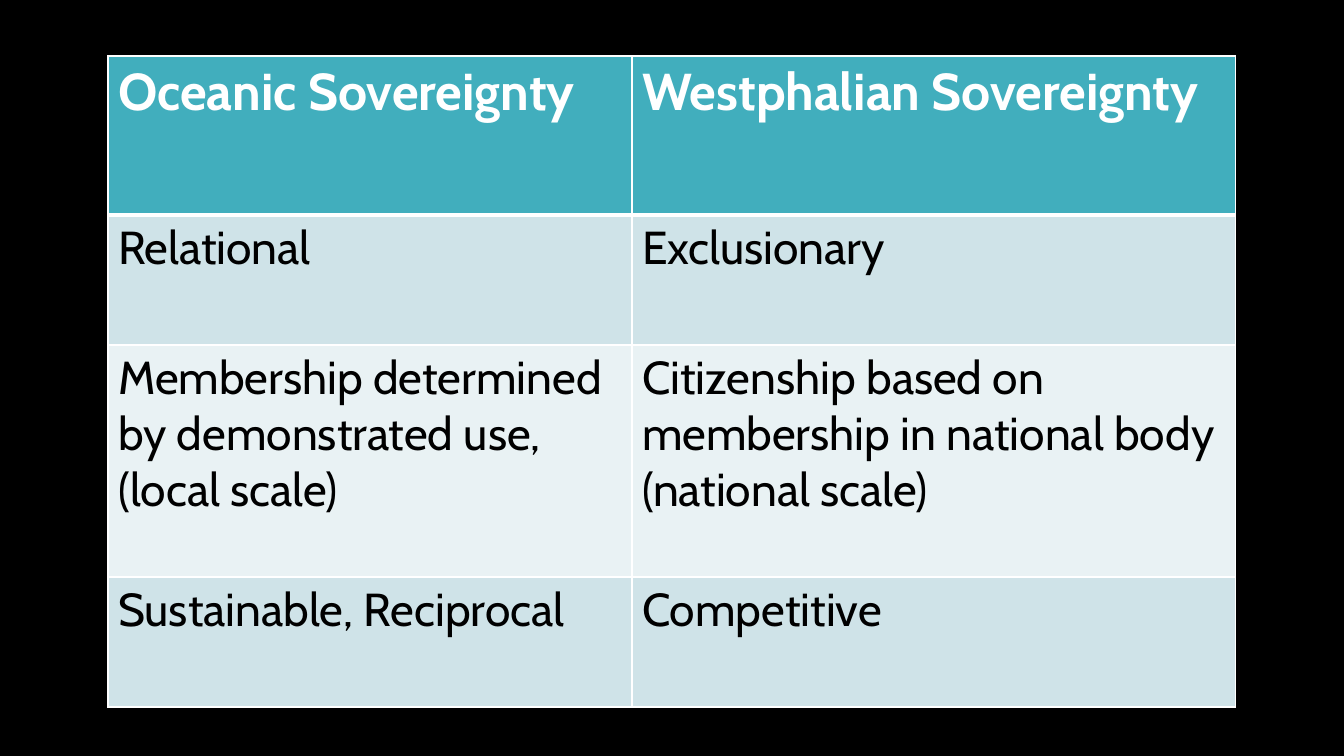
from lxml import etree
from pptx import Presentation, util as u
from pptx.dml.color import RGBColor
from pptx.oxml.ns import qn

ROWS = [
    ("Oceanic Sovereignty", "Westphalian Sovereignty"),
    ("Relational", "Exclusionary"),
    ("Membership determined by demonstrated use, (local scale)",
     "Citizenship based on membership in national body (national scale)"),
    ("Sustainable, Reciprocal", "Competitive"),
]
WIDTHS = [524, 604]
HEIGHTS = [159, 130, 232, 130]
LEFT, TOP = 108, 56

BLACK = RGBColor(0x00, 0x00, 0x00)
WHITE = RGBColor(0xFF, 0xFF, 0xFF)
TEAL = RGBColor(0x41, 0xAE, 0xBD)
MIST = RGBColor(0xCF, 0xE3, 0xE8)
PALE = RGBColor(0xE9, 0xF2, 0xF4)


def px(n):
    return u.Emu(round(n * 914400 / 100.8))


def write(cell, words, size, color, bold=False):
    cell.text = words
    font = cell.text_frame.paragraphs[0].runs[0].font
    font.name, font.size, font.bold = "Cabin", u.Pt(size), bold
    font.color.rgb = color


def edge(cell, side, width):
    line = etree.SubElement(cell._tc.get_or_add_tcPr(), qn("a:ln" + side),
                            w=str(u.Pt(width)))
    fill = etree.SubElement(line, qn("a:solidFill"))
    etree.SubElement(fill, qn("a:srgbClr"), val=str(WHITE))


def main():
    deck = Presentation()
    deck.slide_width, deck.slide_height = px(1344), px(756)
    slide = deck.slides.add_slide(deck.slide_layouts[6])
    back = slide.background.fill
    back.solid()
    back.fore_color.rgb = BLACK

    table = slide.shapes.add_table(
        len(ROWS), len(WIDTHS), px(LEFT), px(TOP),
        px(sum(WIDTHS)), px(sum(HEIGHTS))).table
    for col, width in zip(table.columns, WIDTHS):
        col.width = px(width)
    for row, height in zip(table.rows, HEIGHTS):
        row.height = px(height)

    for r, row in enumerate(ROWS):
        head = r == 0
        for c, words in enumerate(row):
            cell = table.cell(r, c)
            if head:
                write(cell, words, 37, WHITE, bold=True)
            else:
                write(cell, words, 33, BLACK)
            for side in "LRTB":
                thick = (head and side == "B") or (r == 1 and side == "T")
                edge(cell, side, 3 if thick else 1)
            cell.fill.solid()
            cell.fill.fore_color.rgb = TEAL if head else MIST if r % 2 else PALE

    deck.save("out.pptx")


if __name__ == "__main__":
    main()
